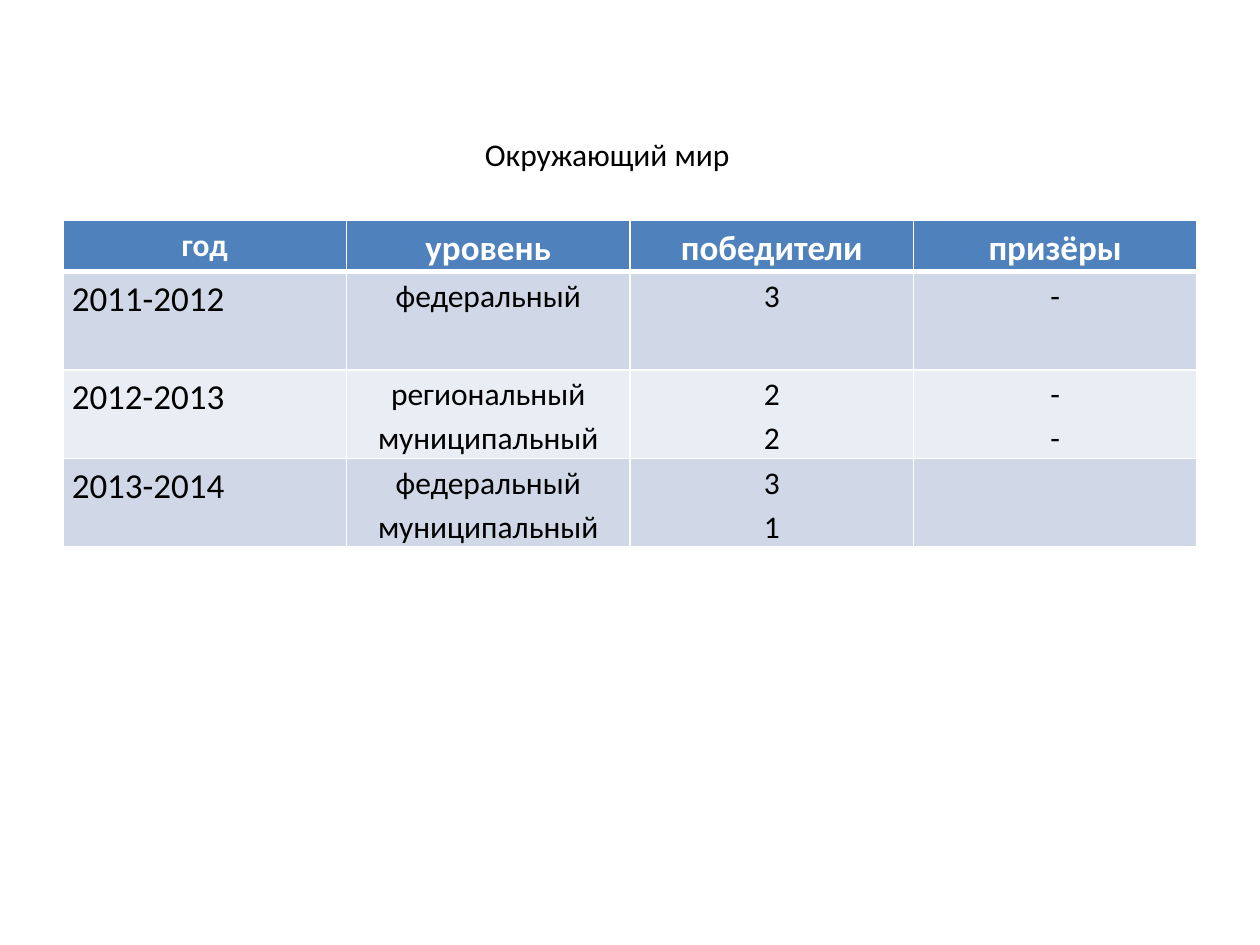
from lxml.etree import SubElement
from pptx import Presentation
from pptx.dml.color import RGBColor
from pptx.enum.text import PP_ALIGN
from pptx.oxml.ns import qn
from pptx.util import Inches, Pt

COLORS = {"header": "4F81BD", "odd": "D0D8E8", "even": "E9EDF4",
          "light": "FFFFFF", "dark": "000000"}
SLIDE_WIDTH, SLIDE_HEIGHT = 10, 7.5
ROW_HEIGHTS = [0.4, 0.78, 0.7, 0.7]
ROWS = [
    ["год", "уровень", "победители", "призёры"],
    ["2011-2012", "федеральный", "3", "-"],
    ["2012-2013", "региональный\nмуниципальный", "2\n2", "-\n-"],
    ["2013-2014", "федеральный\nмуниципальный", "3\n1", ""],
]
LOOSE = {"margin_left": Inches(0.1), "margin_right": Inches(0.1),
         "margin_top": Inches(0.05), "margin_bottom": Inches(0.05)}
TIGHT = {"margin_left": Inches(0.07), "margin_right": Inches(0.07),
         "margin_top": 0, "margin_bottom": 0}


def set_values(target, values):
    """Set each named attribute of the target."""
    for name, value in values.items():
        setattr(target, name, value)


def write_text(frame, text, size, color, bold=False, **layout):
    """Write one formatted paragraph for each line of text."""
    frame.text = text
    for paragraph in frame.paragraphs:
        set_values(paragraph, layout)
        set_values(paragraph.font, {"name": "Calibri", "size": Pt(size), "bold": bold})
        paragraph.font.color.rgb = RGBColor.from_string(COLORS[color])


def add_borders(cell, bottom, top):
    """Give the cell white borders of the given widths in points."""
    properties = cell._tc.get_or_add_tcPr()
    for tag, width in (("a:lnL", 1), ("a:lnR", 1), ("a:lnT", top), ("a:lnB", bottom)):
        line = SubElement(properties, qn(tag), w=str(Pt(width)))
        fill = SubElement(line, qn("a:solidFill"))
        SubElement(fill, qn("a:srgbClr"), val=COLORS["light"])


def format_cell(cell, text, row, column):
    """Fill, border and write a cell by its place in the table."""
    header, year = row == 0, column == 0
    add_borders(cell, bottom=3 if header else 1, top=3 if row == 1 else 1)
    cell.fill.solid()
    band = "header" if header else ("odd" if row % 2 else "even")
    cell.fill.fore_color.rgb = RGBColor.from_string(COLORS[band])
    corner = header and year
    set_values(cell, LOOSE if corner else TIGHT)
    write_text(cell.text_frame, text, 20 if header != year else 18,
               "light" if header else "dark", bold=header,
               alignment=PP_ALIGN.LEFT if year and not header else PP_ALIGN.CENTER,
               line_spacing=1.0 if corner else 1.15)


def add_title(slide, left, top, width, height):
    """Place the subject name in its box."""
    shape = slide.shapes.add_textbox(*map(Inches, (left, top, width, height)))
    shape.text_frame.word_wrap = True
    write_text(shape.text_frame, "Окружающий мир", 18, "dark")


def add_results(slide, left, top, width):
    """Place the table of results by year in equal columns."""
    box = map(Inches, (left, top, width, sum(ROW_HEIGHTS)))
    table = slide.shapes.add_table(len(ROWS), len(ROWS[0]), *box).table
    for row, texts in enumerate(ROWS):
        table.rows[row].height = Inches(ROW_HEIGHTS[row])
        for column, text in enumerate(texts):
            format_cell(table.cell(row, column), text, row, column)


def main():
    """Build and save the slide."""
    presentation = Presentation()
    presentation.slide_width = Inches(SLIDE_WIDTH)
    presentation.slide_height = Inches(SLIDE_HEIGHT)
    slide = presentation.slides.add_slide(presentation.slide_layouts[6])
    add_results(slide, SLIDE_WIDTH * 0.05, 1.75, SLIDE_WIDTH * 0.9)
    add_title(slide, SLIDE_WIDTH * 0.375, 1.02, 3.13, 0.4)
    presentation.save("out.pptx")


if __name__ == "__main__":
    main()
